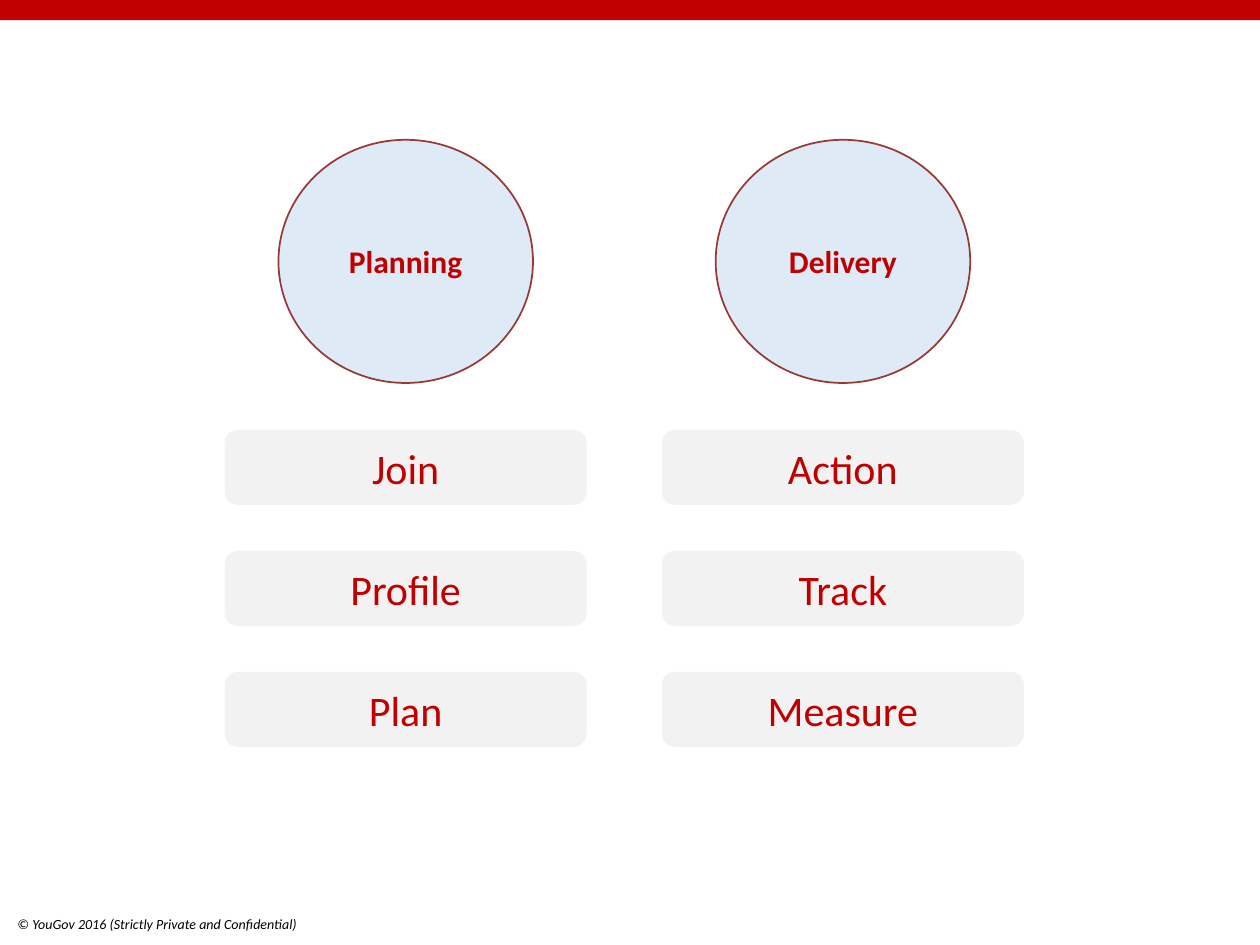
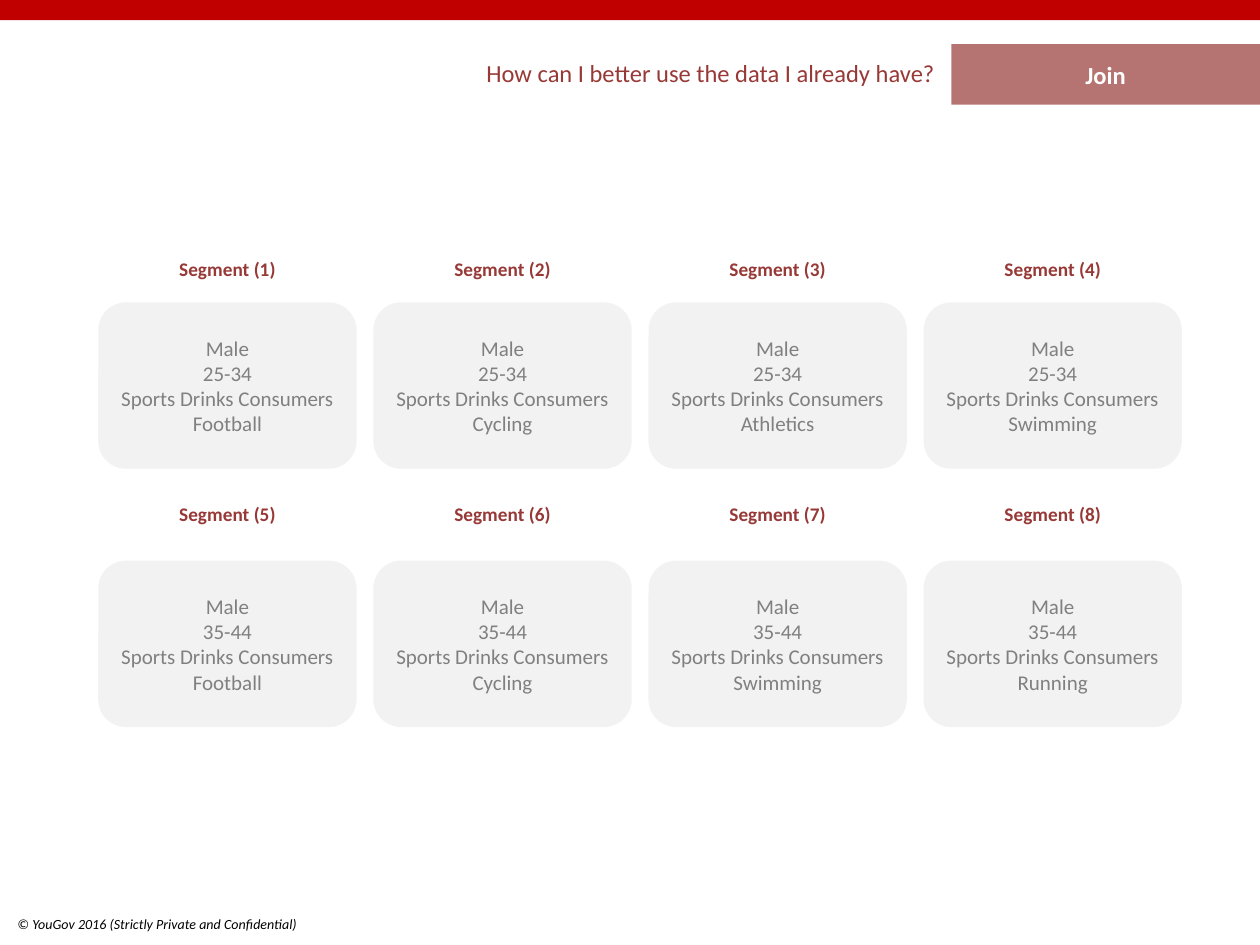
from dataclasses import dataclass
from typing import Optional

from lxml.etree import SubElement
from pptx import Presentation
from pptx.dml.color import RGBColor
from pptx.enum.shapes import MSO_SHAPE as Preset
from pptx.enum.text import MSO_ANCHOR as Anchor, MSO_AUTO_SIZE as AutoSize, PP_ALIGN as Align
from pptx.oxml.ns import qn
from pptx.shapes.autoshape import Shape
from pptx.slide import Slide
from pptx.util import Inches, Pt

FONT = "Calibri"
COLORS = {
    "red": "C00000",
    "brick": "973936",
    "sky": "DEEBF7",
    "mist": "F2F2F2",
    "gray": "808080",
    "white": "FFFFFF",
    "black": "000000",
}
FOOTER = "© YouGov 2016 (Strictly Private and Confidential)"


@dataclass(frozen=True)
class Area:
    left: float
    top: float
    width: float
    height: float

    def lengths(self) -> tuple:
        return tuple(Inches(n) for n in (self.left, self.top, self.width, self.height))


@dataclass(frozen=True)
class Phase:
    name: str
    center: float
    steps: tuple[str, ...]


@dataclass(frozen=True)
class Segment:
    ages: str
    sport: str


PHASES = (
    Phase("Planning", 3.22, ("Join", "Profile", "Plan")),
    Phase("Delivery", 6.69, ("Action", "Track", "Measure")),
)
SEGMENTS = (
    Segment("25-34", "Football"),
    Segment("25-34", "Cycling"),
    Segment("25-34", "Athletics"),
    Segment("25-34", "Swimming"),
    Segment("35-44", "Football"),
    Segment("35-44", "Cycling"),
    Segment("35-44", "Swimming"),
    Segment("35-44", "Running"),
)


def color(name: str) -> RGBColor:
    return RGBColor.from_string(COLORS[name])


def write_text(shape: Shape, text: str, *, size: float, ink: str, bold: bool = False,
               italic: bool = False, align: Align = Align.CENTER) -> None:
    frame = shape.text_frame
    for index, line in enumerate(text.split("\n")):
        para = frame.add_paragraph() if index else frame.paragraphs[0]
        para.alignment = align
        span = para.add_run()
        span.text = line
        span.font.name = FONT
        span.font.size = Pt(size)
        span.font.bold = bold
        span.font.italic = italic
        span.font.color.rgb = color(ink)


def add_panel(page: Slide, preset: Preset, area: Area, fill: str, *,
              outline: Optional[str] = None, opacity: int = 100) -> Shape:
    panel = page.shapes.add_shape(preset, *area.lengths())
    panel.shadow.inherit = False
    panel.fill.solid()
    panel.fill.fore_color.rgb = color(fill)
    if opacity < 100:
        tint = next(panel.element.iter(qn("a:srgbClr")))
        SubElement(tint, qn("a:alpha"), val=str(opacity * 1000))
    if outline:
        panel.line.color.rgb = color(outline)
        panel.line.width = Pt(1)
    else:
        panel.line.fill.background()
    panel.text_frame.word_wrap = True
    panel.text_frame.vertical_anchor = Anchor.MIDDLE
    return panel


def add_label(page: Slide, area: Area, *, wrap: bool = True) -> Shape:
    box = page.shapes.add_textbox(*area.lengths())
    box.text_frame.word_wrap = wrap
    box.text_frame.auto_size = AutoSize.SHAPE_TO_FIT_TEXT
    return box


def add_page(deck: Presentation) -> Slide:
    page = deck.slides.add_slide(deck.slide_layouts[6])
    add_panel(page, Preset.RECTANGLE, Area(0, 0, 10, 0.16), "red")
    footer = add_label(page, Area(0.04, 7.22, 4.12, 0.24))
    write_text(footer, FOOTER, size=8, ink="black", italic=True, align=Align.LEFT)
    return page


def add_phase(page: Slide, phase: Phase) -> None:
    circle_width, step_width = 2.02, 2.86
    circle_area = Area(phase.center - circle_width / 2, 1.11, circle_width, 1.93)
    circle = add_panel(page, Preset.OVAL, circle_area, "sky", outline="brick")
    write_text(circle, phase.name, size=18, ink="red", bold=True)
    for row, step in enumerate(phase.steps):
        area = Area(phase.center - step_width / 2, 3.42 + row * 0.96, step_width, 0.58)
        button = add_panel(page, Preset.ROUNDED_RECTANGLE, area, "mist", outline="mist")
        write_text(button, step, size=24, ink="red")


def add_segment(page: Slide, index: int, segment: Segment) -> None:
    row, column = divmod(index, 4)
    left, width = 0.78 + column * (7.33 - 0.78) / 3, 2.05
    heading = add_label(page, Area(left, 1.99 + row * 1.95, width, 0.29))
    write_text(heading, f"Segment ({index + 1})", size=11, ink="brick", bold=True)
    card_area = Area(left, 2.4 + row * 2.05, width, 1.32)
    card = add_panel(page, Preset.ROUNDED_RECTANGLE, card_area, "mist")
    profile = f"Male\n{segment.ages}\nSports Drinks Consumers\n{segment.sport}"
    write_text(card, profile, size=12, ink="gray")


def add_heading(page: Slide, step: str, question: str) -> None:
    tag = add_panel(page, Preset.RECTANGLE, Area(7.55, 0.35, 2.45, 0.48), "brick", opacity=70)
    write_text(tag, step, size=14, ink="white", bold=True)
    box = add_label(page, Area(3.72, 0.41, 3.8, 0.34), wrap=False)
    write_text(box, question, size=14, ink="brick", align=Align.RIGHT)


def main() -> None:
    deck = Presentation()
    deck.slide_width, deck.slide_height = Inches(10), Inches(7.5)

    overview = add_page(deck)
    for phase in PHASES:
        add_phase(overview, phase)

    segmentation = add_page(deck)
    add_heading(segmentation, "Join", "How can I better use the data I already have?")
    for index, segment in enumerate(SEGMENTS):
        add_segment(segmentation, index, segment)

    deck.save("out.pptx")


if __name__ == "__main__":
    main()
